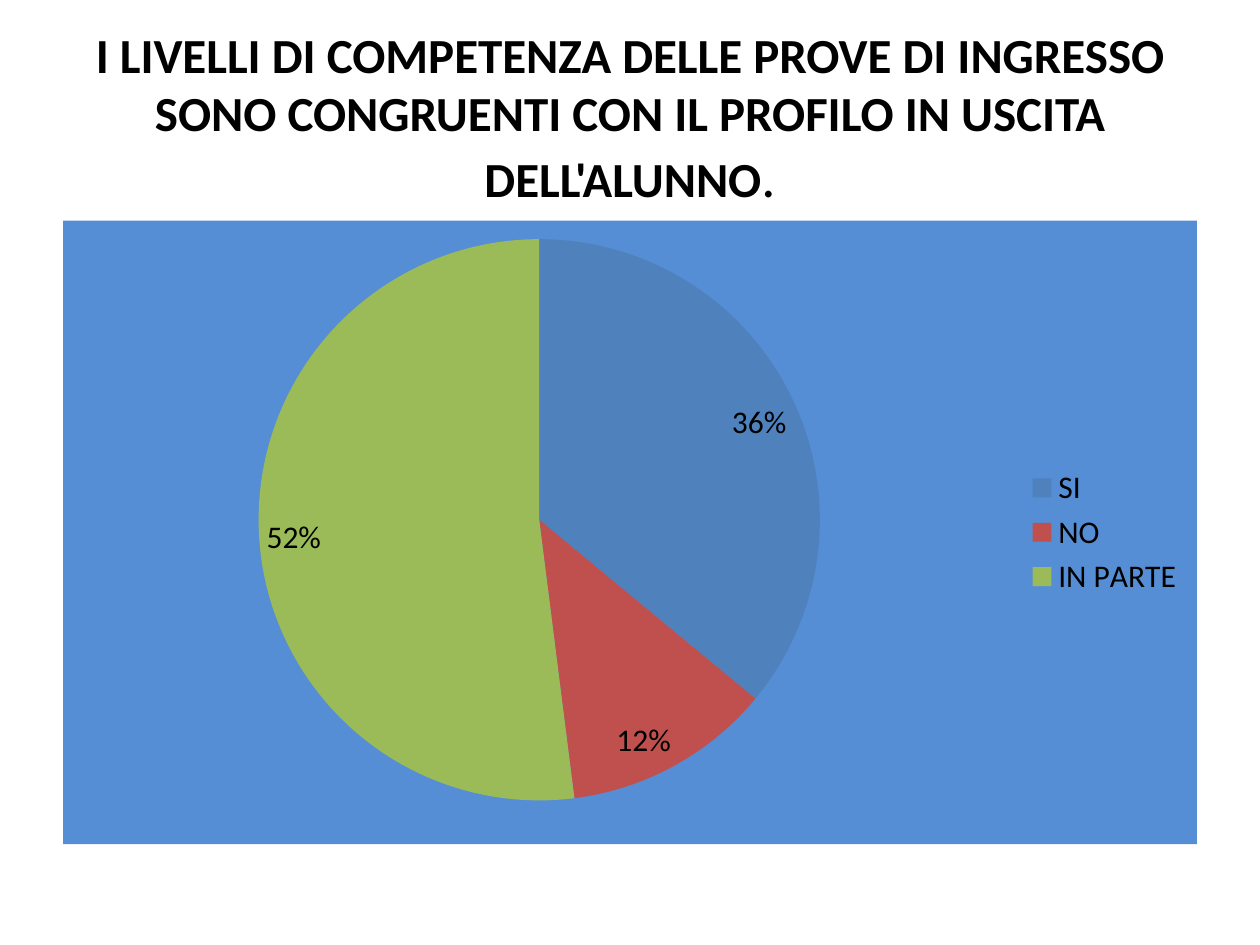
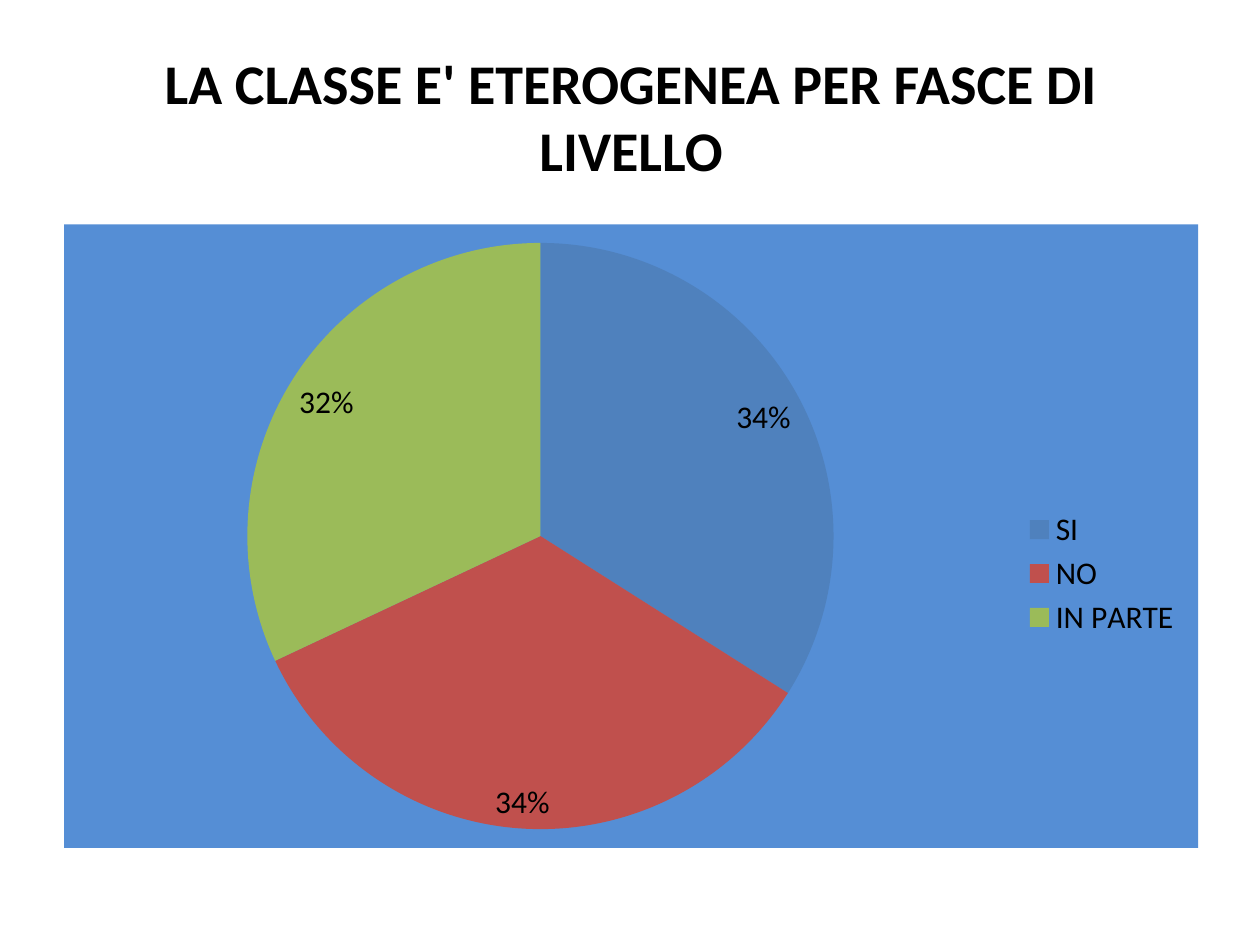
from lxml import etree
from pptx import Presentation
from pptx import util as u
from pptx.chart.data import CategoryChartData
from pptx.dml.color import RGBColor
from pptx.enum import chart as ch
from pptx.enum import text as tx
from pptx.oxml import parse_xml
from pptx.oxml.ns import nsdecls, qn

FONT, INK, PANEL = "Calibri", "000000", "558ED5"
ANSWERS = {"SI": "4F81BD", "NO": "C0504D", "IN PARTE": "9BBB59"}
BOX_WIDTH, TITLE_HEIGHT, CHART_HEIGHT = 648, 90, 356.4

# Pie and legend places are fractions of the chart: left, top, width, height.
SLIDES = [
    {
        "title": [
            ("I LIVELLI DI COMPETENZA DELLE PROVE DI INGRESSO SONO CONGRUENTI "
             "CON IL PROFILO IN USCITA DELL'ALUNNO", {"size": 28, "bold": True}),
            (".", {"size": 32}),
        ],
        "title_at": (36, 21.6),
        "chart_at": (36, 126),
        "shares": (0.36, 0.12, 0.52),
        "pie": (0.17, 0.03, 0.5, 0.9),
        "legend": None,
    },
    {
        "title": [("LA CLASSE E' ETEROGENEA PER FASCE DI LIVELLO",
                   {"size": 32, "bold": True})],
        "title_at": (36.72, 20.88),
        "chart_at": (36.72, 128.16),
        "shares": (0.34, 0.34, 0.32),
        "pie": (0.16, 0.03, 0.52, 0.94),
        "legend": (0.84, 0.45, 0.15, 0.22),
    },
]


def color(code):
    return RGBColor.from_string(code)


def style_font(font, size, bold=False):
    font.name, font.size, font.bold = FONT, u.Pt(size), bold
    font.color.rgb = color(INK)


def add_text(para, text, **style):
    span = para.add_run()
    span.text = text
    style_font(span.font, **style)


def add_title(page, spans, left, top):
    box = page.shapes.title
    box.left, box.top = u.Pt(left), u.Pt(top)
    box.width, box.height = u.Pt(BOX_WIDTH), u.Pt(TITLE_HEIGHT)
    frame = box.text_frame
    frame.word_wrap = True
    frame.auto_size = tx.MSO_AUTO_SIZE.NONE
    frame.vertical_anchor = tx.MSO_ANCHOR.MIDDLE
    para = frame.paragraphs[0]
    para.alignment = tx.PP_ALIGN.CENTER
    for text, style in spans:
        add_text(para, text, **style)


def place(parent, index, fractions, inner=False):
    """Give a chart part a manual layout, as its child at the given index."""
    for old in parent.findall(qn("c:layout")):
        parent.remove(old)
    layout = parse_xml(f"<c:layout {nsdecls('c')}><c:manualLayout/></c:layout>")
    settings = [("layoutTarget", "inner")] if inner else []
    settings += [("xMode", "edge"), ("yMode", "edge")]
    settings += zip("xywh", fractions)
    for name, value in settings:
        etree.SubElement(layout[0], qn(f"c:{name}")).set("val", str(value))
    parent.insert(index, layout)


def fill_panel(chart):
    panel = parse_xml(
        f"<c:spPr {nsdecls('c', 'a')}><a:solidFill><a:srgbClr val='{PANEL}'/>"
        "</a:solidFill><a:ln><a:noFill/></a:ln></c:spPr>")
    chart.element.find(qn("c:chart")).addnext(panel)


def add_pie(page, shares, left, top, pie, legend):
    data = CategoryChartData(number_format="0%")
    data.categories = list(ANSWERS)
    data.add_series("Series 1", shares)
    chart = page.shapes.add_chart(
        ch.XL_CHART_TYPE.PIE, u.Pt(left), u.Pt(top),
        u.Pt(BOX_WIDTH), u.Pt(CHART_HEIGHT), data).chart
    chart.has_title = False
    style_font(chart.font, 18)
    fill_panel(chart)

    plot = chart.plots[0]
    plot.vary_by_categories = True
    for index, code in enumerate(ANSWERS.values()):
        fill = plot.series[0].points[index].format.fill
        fill.solid()
        fill.fore_color.rgb = color(code)
    plot.has_data_labels = True
    labels = plot.data_labels
    labels.show_value, labels.show_percentage = True, False
    labels.number_format, labels.number_format_is_linked = "0%", False
    labels.position = ch.XL_LABEL_POSITION.INSIDE_END
    place(chart.element.find(".//" + qn("c:plotArea")), 0, pie, inner=True)

    chart.has_legend = True
    chart.legend.position = ch.XL_LEGEND_POSITION.RIGHT
    chart.legend.include_in_layout = False
    if legend:
        place(chart.element.find(".//" + qn("c:legend")), 1, legend)


def main():
    deck = Presentation()
    deck.slide_width, deck.slide_height = u.Pt(720), u.Pt(540)
    for content in SLIDES:
        page = deck.slides.add_slide(deck.slide_layouts[5])
        add_title(page, content["title"], *content["title_at"])
        add_pie(page, content["shares"], *content["chart_at"],
                content["pie"], content["legend"])
    deck.save("out.pptx")


if __name__ == "__main__":
    main()
